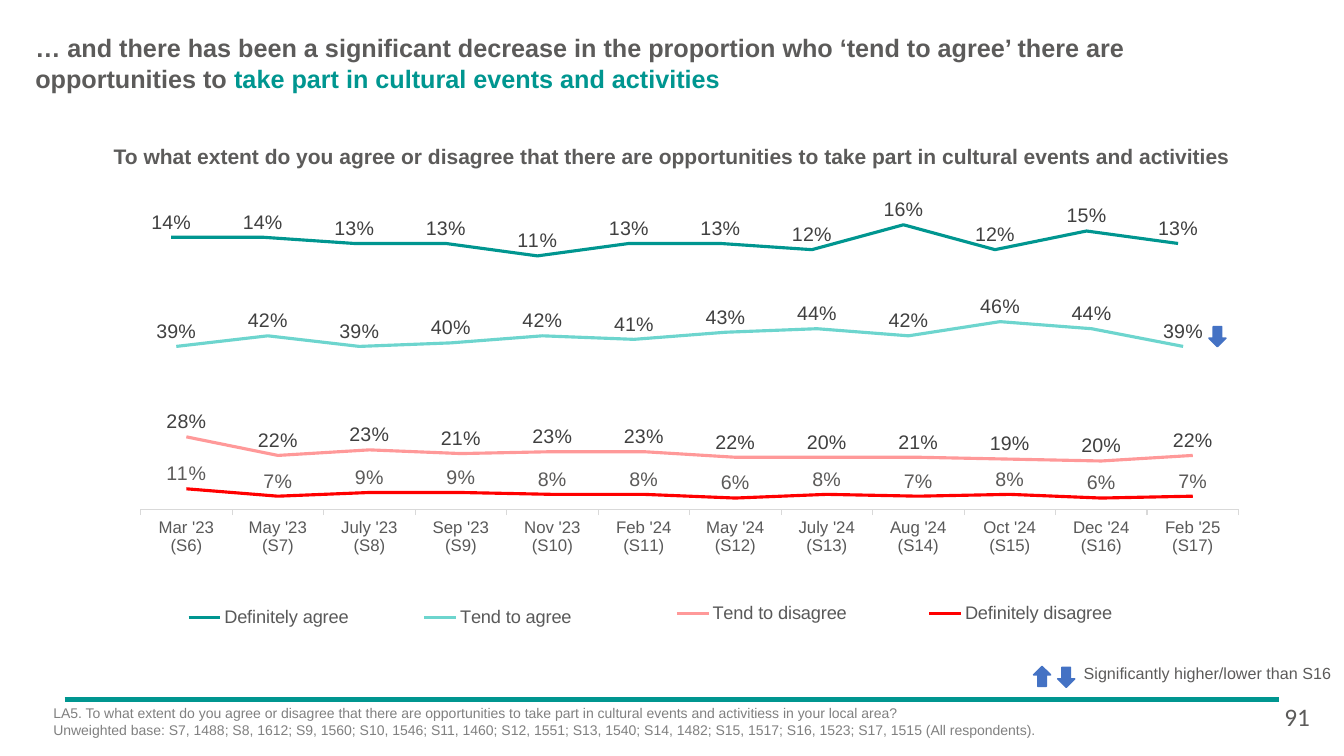
from pptx import Presentation
from pptx.chart.data import CategoryChartData
from pptx.dml.color import RGBColor
from pptx.enum.chart import XL_CHART_TYPE, XL_LABEL_POSITION, XL_LEGEND_POSITION, XL_TICK_LABEL_POSITION, XL_TICK_MARK
from pptx.enum.shapes import MSO_CONNECTOR, MSO_SHAPE
from pptx.enum.text import MSO_ANCHOR, PP_ALIGN
from pptx.oxml import parse_xml
from pptx.oxml.ns import nsdecls, qn
from pptx.util import Inches, Pt

LINE_STACKED = XL_CHART_TYPE.LINE_STACKED
LABEL_ABOVE = XL_LABEL_POSITION.ABOVE
LEGEND_LEFT = XL_LEGEND_POSITION.LEFT
TICK_OUTSIDE = XL_TICK_MARK.OUTSIDE
TICK_NONE = XL_TICK_MARK.NONE
LABELS_NEXT_TO_AXIS = XL_TICK_LABEL_POSITION.NEXT_TO_AXIS
STRAIGHT = MSO_CONNECTOR.STRAIGHT
DOWN_ARROW = MSO_SHAPE.DOWN_ARROW
MIDDLE = MSO_ANCHOR.MIDDLE
LEFT, CENTER = PP_ALIGN.LEFT, PP_ALIGN.CENTER

COLORS = {name: RGBColor.from_string(value) for name, value in {
    "teal": "009690", "mint": "6DD5CE", "pink": "FF9999", "red": "FF0000",
    "text": "5C5B5A", "label": "404040", "axis_text": "595959",
    "axis": "D9D9D9", "footnote": "808080", "arrow": "4472C4",
}.items()}


def set_layout(parent, index, bounds, inner=False):
    for layout in parent.findall(qn("c:layout")):
        parent.remove(layout)
    target = '<c:layoutTarget val="inner"/>' if inner else ""
    sizes = "".join(f'<c:{key} val="{value}"/>' for key, value in zip("xywh", bounds))
    parent.insert(index, parse_xml(
        f'<c:layout {nsdecls("c")}><c:manualLayout>{target}<c:xMode val="edge"/>'
        f'<c:yMode val="edge"/>{sizes}</c:manualLayout></c:layout>'))


def add_text(bounds, lines, size, color, font="Arial", bold=False, align=LEFT, wrap=True):
    frame = slide.shapes.add_textbox(*map(Inches, bounds)).text_frame
    frame.word_wrap = wrap
    for index, line in enumerate(lines):
        paragraph = frame.add_paragraph() if index else frame.paragraphs[0]
        paragraph.text = line
        paragraph.alignment = align
        paragraph.font.name = font
        paragraph.font.size = Pt(size)
        paragraph.font.bold = bold
        paragraph.font.color.rgb = COLORS[color]


presentation = Presentation()
presentation.slide_width = Inches(13.33)
presentation.slide_height = Inches(7.5)
slide = presentation.slides.add_slide(presentation.slide_layouts[5])

rule = slide.shapes.add_connector(STRAIGHT, Inches(0.64), Inches(6.94), Inches(12.69), Inches(6.94))
rule.line.color.rgb = COLORS["teal"]
rule.line.width = Pt(3)
rule._element.spPr.append(parse_xml(f'<a:effectLst {nsdecls("a")}/>'))

title = slide.shapes.title
title.left, title.top, title.width, title.height = map(Inches, (0.25, 0.27, 12.56, 0.71))
title.text_frame.vertical_anchor = MIDDLE
title.text_frame.word_wrap = True
paragraph = title.text_frame.paragraphs[0]
paragraph.alignment = LEFT
paragraph.line_spacing = 1.0
paragraph.font.name = "Arial"
paragraph.font.size = Pt(18)
paragraph.font.bold = True
for text, color in (
    ("… and there has been a significant decrease in the proportion who ‘tend to agree’ there are opportunities to ", "text"),
    ("take part in cultural events and activities", "teal"),
):
    run = paragraph.add_run()
    run.text = text
    run.font.color.rgb = COLORS[color]

add_text((0.71, 1.37, 11.91, 0.35),
         ["To what extent do you agree or disagree that there are opportunities to take part in cultural events and activities"],
         15, "text", bold=True, align=CENTER)

waves = ["Mar '23\n(S6)", "May '23\n(S7)", "July '23\n(S8)", "Sep '23\n(S9)",
         "Nov '23\n(S10)", "Feb '24\n(S11)", "May '24\n(S12)", "July '24\n(S13)",
         "Aug '24\n(S14)", "Oct '24\n(S15)", "Dec '24\n(S16)", "Feb '25\n(S17)"]
numbers = [str(number) for number in range(1, len(waves) + 1)]

charts = [
    {"bounds": (1.19, 1.63, 10.96, 5.01), "plot": (0.005, 0.009, 0.994, 0.308),
     "legend": (0.044, 0.858, 0.181, 0.08), "range": (0, 0.25), "categories": numbers,
     "series": [("Definitely agree", "teal", "label", (14, 14, 13, 13, 11, 13, 13, 12, 16, 12, 15, 13))]},
    {"bounds": (1.24, 2.42, 10.96, 4.58), "plot": (0.005, 0.061, 0.994, 0.537),
     "legend": (0.247, 0.77, 0.181, 0.08), "range": (-0.1, 0.6), "categories": numbers,
     "series": [("Tend to agree", "mint", "label", (39, 42, 39, 40, 42, 41, 43, 44, 42, 46, 44, 39))]},
    {"bounds": (1.39, 3.62, 10.96, 4.44), "plot": (0, 0.074, 0.994, 0.29),
     "legend": (0.416, 0.506, 0.533, 0.1), "range": (-0.1, 0.6), "categories": waves,
     "series": [("Definitely disagree", "red", "text", (11, 7, 9, 9, 8, 8, 6, 8, 7, 8, 6, 7)),
                ("Tend to disagree", "pink", "label", (28, 22, 23, 21, 23, 23, 22, 20, 21, 19, 20, 22))]},
]

for settings in charts:
    data = CategoryChartData(number_format="0%")
    data.categories = settings["categories"]
    for name, _, _, percentages in settings["series"]:
        data.add_series(name, [value / 100 for value in percentages])
    chart = slide.shapes.add_chart(LINE_STACKED, *map(Inches, settings["bounds"]), data).chart
    chart.has_title = False
    chart.font.name = "Arial"
    chart.font.size = Pt(10)

    value_axis = chart.value_axis
    value_axis.minimum_scale, value_axis.maximum_scale = settings["range"]
    value_axis.has_major_gridlines = False
    value_axis.visible = False
    category_axis = chart.category_axis
    category_axis.visible = settings["categories"] is waves
    category_axis.major_tick_mark = TICK_OUTSIDE
    category_axis.minor_tick_mark = TICK_NONE
    category_axis.tick_label_position = LABELS_NEXT_TO_AXIS
    category_axis.tick_labels.font.size = Pt(12)
    category_axis.tick_labels.font.name = "Arial"
    category_axis.tick_labels.font.color.rgb = COLORS["axis_text"]
    category_axis.format.line.color.rgb = COLORS["axis"]
    category_axis.format.line.width = Pt(0.75)

    for series, (_, line_color, label_color, _) in zip(chart.plots[0].series, settings["series"]):
        series.smooth = False
        series.format.line.color.rgb = COLORS[line_color]
        series.format.line.width = Pt(2.25)
        labels = series.data_labels
        labels.show_value = True
        labels.position = LABEL_ABOVE
        labels.number_format = "0%"
        labels.number_format_is_linked = False
        labels.font.name = "Arial"
        labels.font.size = Pt(14)
        labels.font.color.rgb = COLORS[label_color]

    chart.has_legend = True
    legend = chart.legend
    legend.position = LEGEND_LEFT
    legend.include_in_layout = False
    legend.font.name = "Arial"
    legend.font.size = Pt(13)
    legend.font.color.rgb = COLORS["axis_text"]
    set_layout(legend._element, 1, settings["legend"])

    chart_element = chart._chartSpace.find(qn("c:chart"))
    plot_area = chart_element.find(qn("c:plotArea"))
    set_layout(plot_area, 0, settings["plot"], inner=True)
    no_fill = f'<c:spPr {nsdecls("c", "a")}><a:noFill/><a:ln><a:noFill/></a:ln></c:spPr>'
    plot_area.append(parse_xml(no_fill))
    chart_element.addnext(parse_xml(no_fill))

for left, top, rotation in ((10.25, 6.61, 180), (10.49, 6.62, 0), (11.99, 3.24, 0)):
    arrow = slide.shapes.add_shape(DOWN_ARROW, Inches(left), Inches(top), Inches(0.17), Inches(0.2))
    arrow.rotation = rotation
    arrow.shadow.inherit = False
    arrow.fill.solid()
    arrow.fill.fore_color.rgb = COLORS["arrow"]
    arrow.line.color.rgb = COLORS["arrow"]
    arrow.line.width = Pt(1)

add_text((10.65, 6.53, 2.67, 0.29), ["Significantly higher/lower than S16"], 11.5, "text", wrap=False)
add_text((0.43, 6.94, 12.21, 0.56), [
    "LA5. To what extent do you agree or disagree that there are opportunities to take part in cultural events and activitiess in your local area?",
    "Unweighted base: S7, 1488; S8, 1612; S9, 1560; S10, 1546; S11, 1460; S12, 1551; S13, 1540; S14, 1482; S15, 1517; S16, 1523; S17, 1515 (All respondents).",
], 10, "footnote")
add_text((12.64, 6.91, 0.53, 0.4), ["91"], 18, "text", font="Calibri")

presentation.save("out.pptx")
